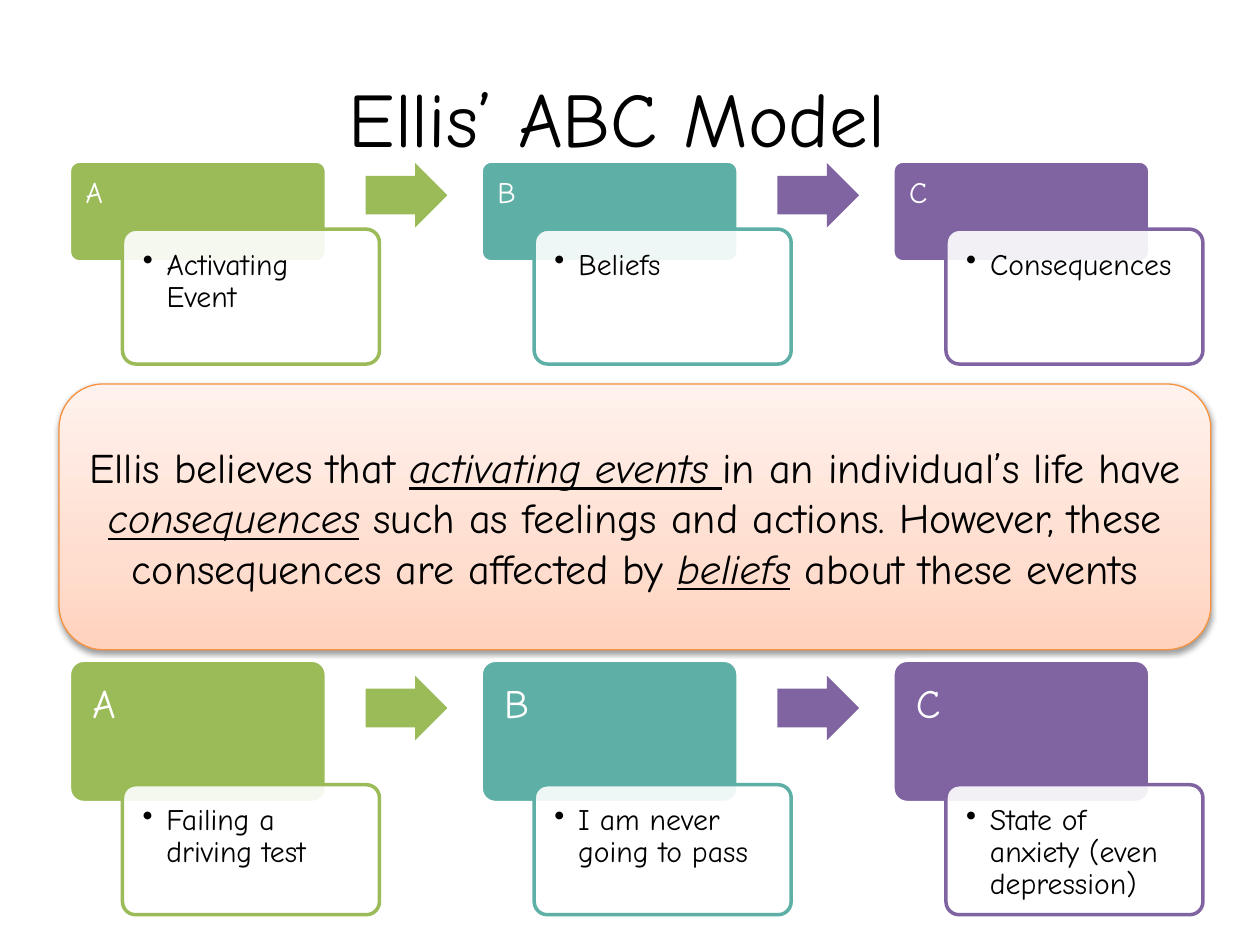
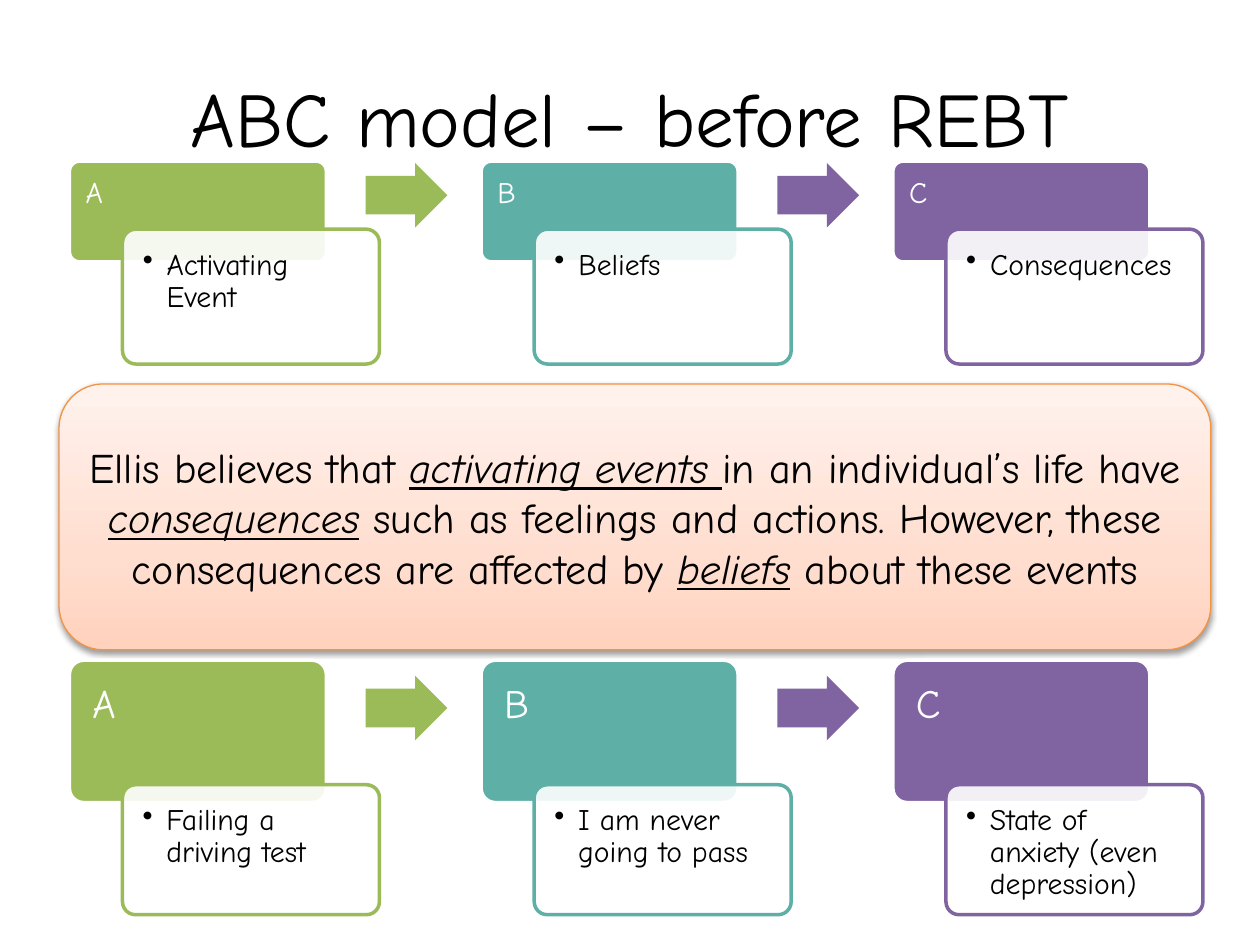
import pptx
import pptx.util
import pptx.dml.color
import pptx.enum.shapes
import pptx.enum.text
import pptx.oxml.ns
import lxml.etree

Cm, Pt = pptx.util.Cm, pptx.util.Pt
SHAPE = pptx.enum.shapes.MSO_SHAPE
ALIGN = pptx.enum.text.PP_ALIGN
ANCHOR = pptx.enum.text.MSO_ANCHOR
qn = pptx.oxml.ns.qn

# Content
TITLES = ["Ellis’ ABC Model ", "ABC model – before REBT"]
STEPS = [("A", "9BBB59"), ("B", "5EAFA6"), ("C", "8064A2")]
ARROWS = ["9BBB59", "8064A2"]
# Each run has its marks: i for italic, u for underline
CLAIM = [
    ("Ellis believes that ", ""),
    ("activating events", "iu"),
    (" ", "u"),
    ("in an individual’s life have ", ""),
    ("consequences", "iu"),
    (" such as feelings and actions. However, these consequences"
     " are affected by ", ""),
    ("beliefs", "iu"),
    (" about these events", ""),
]
# Row lengths are in cm, letter sizes in points
ROWS = [
    dict(notes=["Activating Event", "Beliefs", "Consequences"],
         top=3.25, head=2.03, label=1.37, drop=1.37, body=2.72,
         size=17, pad=0.27),
    dict(notes=["Failing a driving test", "I am never going to pass",
                "State of anxiety (even depression)"],
         top=13.31, head=2.87, label=1.93, drop=2.51, body=2.62,
         size=23, pad=0.38),
]

# Shared look
FONT = "Comic Neue"
BLACK, WHITE = "000000", "FFFFFF"
PANEL = [(0, "FFD2BD"), (35, "FFDED0"), (100, "FFF2ED")]
EDGE = "F69240"
LEFT, PITCH, WIDE, SHIFT = 1.4, 8.3, 5.18, 1.07
ARROW_X, ARROW_W, ARROW_H = 5.97, 1.65, 1.3


def color(code):
    return pptx.dml.color.RGBColor.from_string(code)


def add_node(parent, tag, **attrs):
    node = lxml.etree.SubElement(parent, qn(tag))
    for name, value in attrs.items():
        node.set(name, str(value))
    return node


def write(shape, text, size=17, ink=BLACK, align=ALIGN.LEFT,
          anchor=ANCHOR.TOP, pad=None, space=None, bullet=False):
    """Fill a shape with one paragraph: a string or a list of marked runs."""
    frame = shape.text_frame
    frame.word_wrap = True
    frame.auto_size = pptx.enum.text.MSO_AUTO_SIZE.NONE
    frame.vertical_anchor = anchor
    if pad is not None:
        frame.margin_left = frame.margin_right = Cm(pad)
        frame.margin_top = frame.margin_bottom = Cm(pad)
    para = frame.paragraphs[0]
    if bullet:
        props = para._p.get_or_add_pPr()
        props.set("marL", str(Cm(0.48)))
        props.set("indent", str(-Cm(0.48)))
        add_node(props, "a:buChar", char="•")
    para.alignment = align
    if space:
        para.line_spacing = space
    for words, marks in [(text, "")] if isinstance(text, str) else text:
        run = para.add_run()
        run.text = words
        font = run.font
        font.name, font.size = FONT, Pt(size)
        font.color.rgb = color(ink)
        if "i" in marks:
            font.italic = True
        if "u" in marks:
            font.underline = True


def add_box(slide, kind, x, y, w, h, fill=None, line=None, width=2, adj=()):
    box = slide.shapes.add_shape(kind, Cm(x), Cm(y), Cm(w), Cm(h))
    box.shadow.inherit = False
    for i, value in enumerate(adj):
        box.adjustments[i] = value
    if fill:
        box.fill.solid()
        box.fill.fore_color.rgb = color(fill)
    if line:
        box.line.color.rgb = color(line)
        box.line.width = Pt(width)
    else:
        box.line.fill.background()
    return box


def add_row(slide, row):
    for i, ((name, tint), note) in enumerate(zip(STEPS, row["notes"])):
        x = LEFT + i * PITCH
        # Letter card
        head = add_box(slide, SHAPE.ROUNDED_RECTANGLE, x, row["top"], WIDE,
                       row["head"], tint, WHITE, adj=[0.1])
        write(head, name, size=row["size"], ink=WHITE, pad=row["pad"],
              space=0.9)
        # Note card, slightly see-through
        body = add_box(slide, SHAPE.ROUNDED_RECTANGLE, x + SHIFT,
                       row["top"] + row["drop"], WIDE, row["body"],
                       WHITE, tint, adj=[0.1])
        shade = body._element.spPr.find(qn("a:solidFill"))[0]
        add_node(shade, "a:alpha", val=90000)
        write(body, note, pad=0.33, space=0.9, bullet=True)
    # Arrows, centred on the label band
    y = row["top"] + (row["label"] - ARROW_H) / 2
    for i, tint in enumerate(ARROWS):
        add_box(slide, SHAPE.RIGHT_ARROW, LEFT + ARROW_X + i * PITCH, y,
                ARROW_W, ARROW_H, tint, adj=[0.6, 0.5])


def add_claim(slide):
    panel = add_box(slide, SHAPE.ROUNDED_RECTANGLE, 1.19, 7.74, 23.22, 5.36,
                    line=EDGE, width=0.75)
    # Gradient from the bottom up
    panel.fill.gradient()
    panel.fill.gradient_angle = 90
    props = panel._element.spPr
    stops = props.find(qn("a:gradFill")).find(qn("a:gsLst"))
    for stop in list(stops):
        stops.remove(stop)
    for place, tint in PANEL:
        stop = add_node(stops, "a:gs", pos=place * 1000)
        add_node(stop, "a:srgbClr", val=tint)
    # Soft shadow below
    shadow = add_node(props.find(qn("a:effectLst")), "a:outerShdw",
                      blurRad=Pt(3.1), dist=Pt(1.6), dir=5400000,
                      rotWithShape=0)
    add_node(add_node(shadow, "a:srgbClr", val=BLACK), "a:alpha", val=38000)
    write(panel, CLAIM, size=24, align=ALIGN.CENTER, anchor=ANCHOR.MIDDLE)


def add_page(deck, title):
    slide = deck.slides.add_slide(deck.slide_layouts[5])
    head = slide.shapes.title
    head.left, head.top = Cm(1.27), Cm(0.76)
    head.width, head.height = Cm(22.86), Cm(3.18)
    write(head, title, size=44, align=ALIGN.CENTER, anchor=ANCHOR.MIDDLE)
    add_row(slide, ROWS[0])
    add_claim(slide)
    add_row(slide, ROWS[1])


def main():
    deck = pptx.Presentation()
    deck.slide_width, deck.slide_height = Cm(25.4), Cm(19.05)
    for title in TITLES:
        add_page(deck, title)
    deck.save("out.pptx")


if __name__ == "__main__":
    main()
